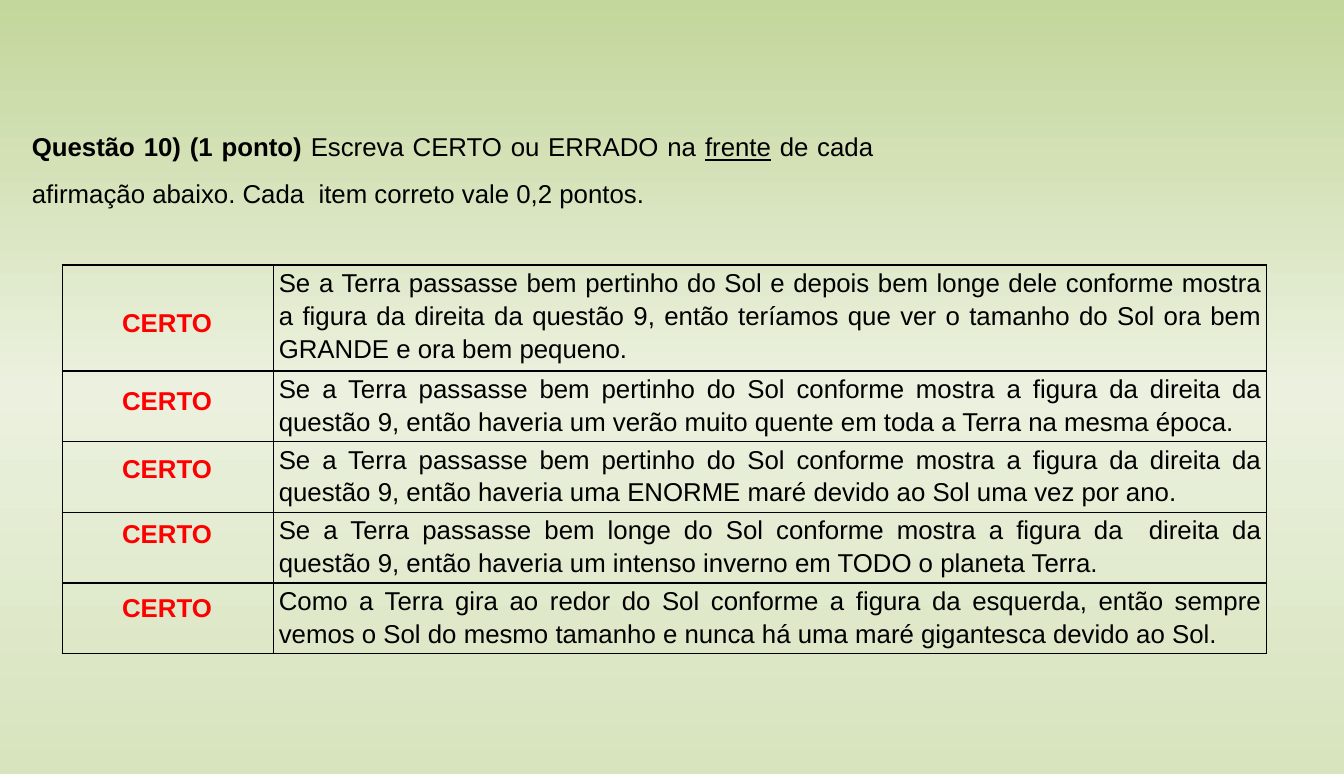
from copy import deepcopy
from dataclasses import dataclass

from lxml import etree
from pptx import Presentation
from pptx.dml.color import RGBColor
from pptx.enum.text import MSO_ANCHOR, MSO_AUTO_SIZE, PP_ALIGN
from pptx.oxml.ns import qn
from pptx.slide import Slide
from pptx.table import _Cell
from pptx.util import Cm, Pt

JUSTIFY, CENTER = PP_ALIGN.JUSTIFY, PP_ALIGN.CENTER
TOP = MSO_ANCHOR.TOP
GROW = MSO_AUTO_SIZE.SHAPE_TO_FIT_TEXT
BLACK = RGBColor(0x00, 0x00, 0x00)
RED = RGBColor(0xFF, 0x00, 0x00)
GREEN_TOP = RGBColor(0xC3, 0xD6, 0x9B)
GREEN_MIDDLE = RGBColor(0xEB, 0xF1, 0xDE)
GREEN_BOTTOM = RGBColor(0xD7, 0xE4, 0xBD)
FONT = "Arial"
SIZE = Pt(18)
TABLE_SPACING = 1.14


@dataclass(frozen=True)
class Item:
    """A statement with its row height and the top of its answer, in cm."""
    statement: str
    row_height: float
    answer_top: float
    answer: str = "CERTO"


@dataclass(frozen=True)
class Piece:
    text: str
    bold: bool = False
    underline: bool = False


QUESTION = [
    Piece("Questão 10) (1 ponto)", bold=True),
    Piece(" Escreva CERTO ou ERRADO na "),
    Piece("frente", underline=True),
    Piece(" de cada afirmação abaixo. Cada  item correto vale 0,2 pontos."),
]

ITEMS = [
    Item("Se a Terra passasse bem pertinho do Sol e depois bem longe dele conforme "
         "mostra a figura da direita da questão 9, então teríamos que ver o tamanho "
         "do Sol ora bem GRANDE e ora bem pequeno.", 2.61, 7.32),
    Item("Se a Terra passasse bem pertinho do Sol conforme mostra a figura da direita "
         "da questão 9, então haveria um verão muito quente em toda a Terra na mesma "
         "época.", 1.74, 9.25),
    Item("Se a Terra passasse bem pertinho do Sol conforme mostra a figura da direita "
         "da questão 9, então haveria uma ENORME maré devido ao Sol uma vez por ano.",
         1.74, 10.92),
    Item("Se a Terra passasse bem longe do Sol conforme mostra a figura da  direita da "
         "questão 9, então haveria um intenso inverno em TODO o planeta Terra.",
         1.74, 12.52),
    Item("Como a Terra gira ao redor do Sol conforme a figura da esquerda, então sempre "
         "vemos o Sol do mesmo tamanho e nunca há uma maré gigantesca devido ao Sol.",
         1.74, 14.33),
]


def format_run(r, color: RGBColor = BLACK, bold: bool = False,
               underline: bool = False) -> None:
    r.font.name = FONT
    r.font.size = SIZE
    r.font.color.rgb = color
    r.font.bold = bold
    r.font.underline = underline


def paint_background(slide: Slide) -> None:
    fill = slide.background.fill
    fill.gradient()
    fill.gradient_angle = 270
    stop_list = slide.element.find(".//" + qn("a:gsLst"))
    stop_list.insert(1, deepcopy(stop_list[0]))
    colors = (GREEN_TOP, GREEN_MIDDLE, GREEN_BOTTOM)
    for stop, color, position in zip(fill.gradient_stops, colors, (0, 0.5, 1)):
        stop.color.rgb = color
        stop.position = position


def add_question(slide: Slide) -> None:
    sp = slide.shapes.title
    sp.left, sp.top, sp.width, sp.height = Cm(0.53), Cm(2.72), Cm(21.21), Cm(2.57)
    tf = sp.text_frame
    tf.word_wrap = True
    tf.auto_size = GROW
    tf.vertical_anchor = TOP
    p = tf.paragraphs[0]
    p.alignment = JUSTIFY
    p.line_spacing = 1.5
    for piece in QUESTION:
        r = p.add_run()
        r.text = piece.text
        format_run(r, bold=piece.bold, underline=piece.underline)


def style_cell(cell: _Cell) -> None:
    """Clear the fill and draw a thin black border on every side."""
    cell.fill.background()
    cell.margin_left = cell.margin_right = Cm(0.13)
    cell.margin_top = cell.margin_bottom = 0
    tc_pr = cell._tc.get_or_add_tcPr()
    for i, side in enumerate(("a:lnL", "a:lnR", "a:lnT", "a:lnB")):
        ln = etree.Element(qn(side), w=str(Pt(1)))
        solid = etree.SubElement(ln, qn("a:solidFill"))
        etree.SubElement(solid, qn("a:srgbClr"), val=str(BLACK))
        tc_pr.insert(i, ln)


def add_statements(slide: Slide) -> None:
    height = sum(item.row_height for item in ITEMS)
    table = slide.shapes.add_table(len(ITEMS), 2, Cm(1.53), Cm(6.52),
                                   Cm(29.64), Cm(height)).table
    table.first_row = table.horz_banding = False
    table.columns[0].width, table.columns[1].width = Cm(5.2), Cm(24.44)
    for row, item in zip(table.rows, ITEMS):
        row.height = Cm(item.row_height)
        for cell in row.cells:
            style_cell(cell)
        p = row.cells[1].text_frame.paragraphs[0]
        p.text = item.statement
        p.alignment = JUSTIFY
        p.line_spacing = TABLE_SPACING
        format_run(p.runs[0])


def add_answer(slide: Slide, item: Item) -> None:
    sp = slide.shapes.add_textbox(Cm(2.74), Cm(item.answer_top), Cm(2.74), Cm(1.14))
    tf = sp.text_frame
    tf.text = item.answer
    tf.word_wrap = False
    tf.auto_size = GROW
    p = tf.paragraphs[0]
    p.alignment = CENTER
    p.line_spacing = TABLE_SPACING
    format_run(p.runs[0], RED, bold=True)


def main() -> None:
    prs = Presentation()
    prs.slide_width, prs.slide_height = Cm(33.07), Cm(19.05)
    slide = prs.slides.add_slide(prs.slide_layouts.get_by_name("Title Only"))
    paint_background(slide)
    add_question(slide)
    add_statements(slide)
    for item in ITEMS:
        add_answer(slide, item)
    prs.save("out.pptx")


if __name__ == "__main__":
    main()
